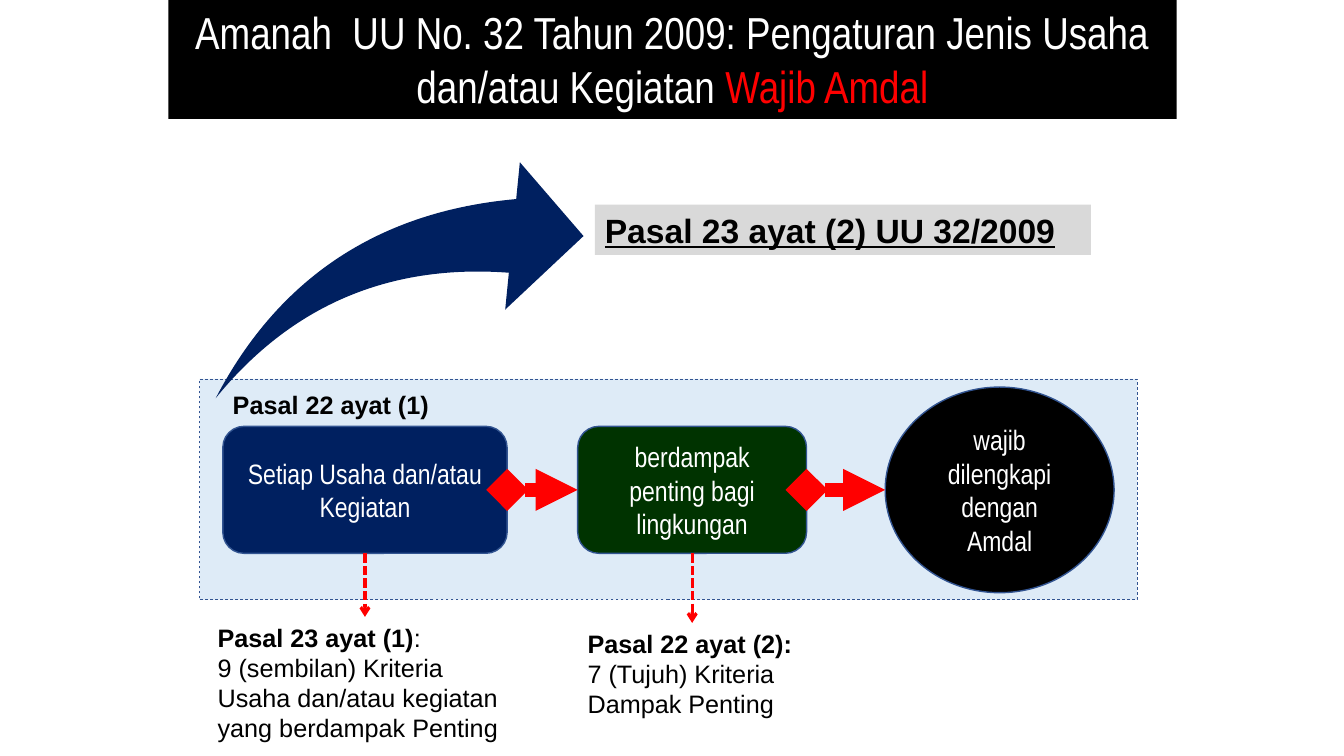
from dataclasses import dataclass

from lxml.etree import SubElement
from pptx import Presentation
from pptx.dml.color import RGBColor
from pptx.enum.dml import MSO_LINE as Dash
from pptx.enum.shapes import MSO_CONNECTOR as Link, MSO_SHAPE as Form
from pptx.enum.text import MSO_ANCHOR as Anchor, MSO_AUTO_SIZE as Auto, PP_ALIGN as Align
from pptx.oxml.ns import qn
from pptx.util import Emu, Pt

SCALE = 9144  # EMU per px, 100 px to the inch
NAVY, BLACK, WHITE, RED, EDGE = "002060", "000000", "FFFFFF", "FF0000", "325491"
MID = 486  # height of the flow's centre line

HEAD = dict(name="Arial Narrow", size=Pt(32), color=WHITE)
NODE = dict(HEAD, size=Pt(20))
BODY = dict(name="Arial", size=Pt(18), color=BLACK, bold=False)
BOLD = dict(BODY, bold=True)
LAW = dict(BOLD, size=Pt(24), underline=True)

Para = list[tuple[str, dict]]


@dataclass
class Box:
    form: Form | None  # None makes a text box
    at: tuple[int, int, int, int]
    paras: list[Para]
    fill: str = ""
    edge: float = 0
    dash: Dash | None = None
    align: Align = Align.LEFT
    anchor: Anchor = Anchor.TOP
    grow: bool = True


@dataclass
class Arrow:
    ends: tuple[int, int, int, int]
    width: float
    tail: str
    head: str = ""
    dash: Dash | None = None


def px(num: int) -> Emu:
    return Emu(num * SCALE)


def paint(color, code: str) -> None:
    color.rgb = RGBColor.from_string(code)


def write(frame, box: Box) -> None:
    frame.word_wrap = True
    frame.auto_size = Auto.SHAPE_TO_FIT_TEXT if box.grow else Auto.NONE
    frame.vertical_anchor = box.anchor
    for i, para in enumerate(box.paras):
        line = frame.add_paragraph() if i else frame.paragraphs[0]
        line.alignment = box.align
        for text, style in para:
            run = line.add_run()
            run.text = text
            for key, val in style.items():
                if key == "color":
                    paint(run.font.color, val)
                else:
                    setattr(run.font, key, val)


def draw(shapes, box: Box):
    place = [px(n) for n in box.at]
    if box.form is None:
        item = shapes.add_textbox(*place)
    else:
        item = shapes.add_shape(box.form, *place)
        item.shadow.inherit = False
        item.fill.solid()
        paint(item.fill.fore_color, box.fill)
        if box.edge:
            paint(item.line.color, EDGE)
            item.line.width = Pt(box.edge)
            if box.dash:
                item.line.dash_style = box.dash
        else:
            item.line.fill.background()
    if box.paras:
        write(item.text_frame, box)
    return item


def join(shapes, arrow: Arrow, start, site: int, stop=None, goal: int = 0) -> None:
    link = shapes.add_connector(Link.STRAIGHT, *[px(n) for n in arrow.ends])
    link.begin_connect(start, site)
    if stop is not None:
        link.end_connect(stop, goal)
    paint(link.line.color, RED)
    link.line.width = Pt(arrow.width)
    if arrow.dash:
        link.line.dash_style = arrow.dash
    pen = link.line._get_or_add_ln()
    for tag, kind in (("a:headEnd", arrow.head), ("a:tailEnd", arrow.tail)):
        if kind:
            SubElement(pen, qn(tag), type=kind)
    SubElement(link._element.spPr, qn("a:effectLst"))


def node(form: Form, left: int, wide: int, high: int, fill: str, text: str) -> Box:
    return Box(form, (left, MID - high // 2, wide, high), [[(text, NODE)]], fill, 1,
               align=Align.CENTER, anchor=Anchor.MIDDLE, grow=False)


def main() -> None:
    deck = Presentation()
    deck.slide_width, deck.slide_height = px(1333), px(750)
    shapes = deck.slides.add_slide(deck.slide_layouts[6]).shapes

    # Panel and title
    draw(shapes, Box(Form.RECTANGLE, (198, 376, 930, 219), [], "DEEBF7", 0.5, Dash.DASH))
    title = [("Amanah  UU No. 32 Tahun 2009: Pengaturan Jenis Usaha dan/atau Kegiatan ", HEAD),
             ("Wajib Amdal", dict(HEAD, color=RED))]
    draw(shapes, Box(Form.RECTANGLE, (167, 0, 1000, 118), [title], BLACK, align=Align.CENTER))

    # Flow from business to duty
    firm = draw(shapes, node(Form.ROUNDED_RECTANGLE, 221, 282, 126, NAVY,
                             "Setiap Usaha dan/atau Kegiatan"))
    impact = draw(shapes, node(Form.ROUNDED_RECTANGLE, 573, 227, 126, "003300",
                               "berdampak penting bagi lingkungan"))
    draw(shapes, node(Form.OVAL, 878, 227, 204, BLACK, "wajib dilengkapi dengan Amdal"))
    join(shapes, Arrow((503, MID, 573, MID), 10, "triangle", "diamond"), firm, 3, impact, 1)
    join(shapes, Arrow((800, MID, 878, MID), 10, "triangle", "diamond"), impact, 3)

    # Criteria notes under the flow
    seven = draw(shapes, Box(None, (573, 618, 227, 101), [
        [("Pasal 22 ayat (2):", BOLD)],
        [("7 (Tujuh) Kriteria Dampak Penting", BODY)]]))
    nine = draw(shapes, Box(None, (206, 612, 312, 131), [
        [("Pasal 23 ayat (1)", BOLD), (":", BODY)],
        [("9 (sembilan) Kriteria Usaha dan/atau kegiatan yang berdampak Penting", BODY)]]))
    draw(shapes, Box(None, (221, 381, 305, 40), [[("Pasal 22 ayat (1)", BOLD)]]))
    for start, stop, mid, end in ((firm, nine, 362, 612), (impact, seven, 686, 618)):
        drop = Arrow((mid, 549, mid, end), 2.25, "arrow", dash=Dash.SQUARE_DOT)
        join(shapes, drop, start, 2, stop, 0)

    # Swoosh up to the article of law
    swoosh = draw(shapes, Box(Form.SWOOSH_ARROW, (241, 140, 323, 292), [], NAVY))
    swoosh.rotation = 12.1
    for i in range(2):
        swoosh.adjustments[i] = 0.25
    draw(shapes, Box(Form.RECTANGLE, (590, 203, 492, 50),
                     [[("Pasal 23 ayat (2) UU 32/2009", LAW)]], "D9D9D9"))

    deck.save("out.pptx")


if __name__ == "__main__":
    main()
